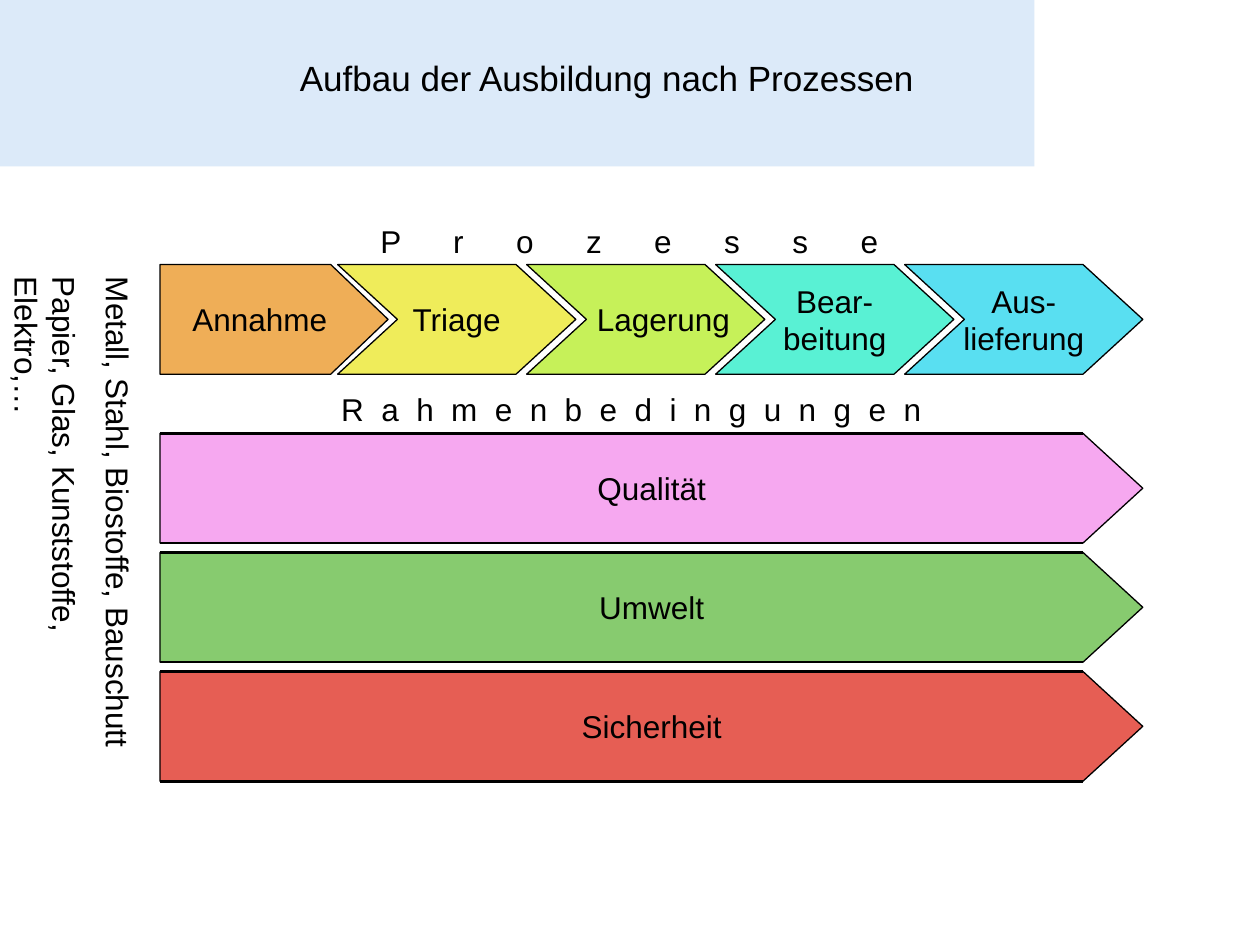
from dataclasses import dataclass

from pptx import Presentation
from pptx.dml.color import RGBColor
from pptx.enum.shapes import MSO_CONNECTOR, MSO_SHAPE
from pptx.enum.text import MSO_ANCHOR, PP_ALIGN
from pptx.oxml.ns import qn
from pptx.util import Inches, Pt


@dataclass(frozen=True)
class Theme:
    font: str = "Arial"
    title_size: int = 20
    body_size: int = 18
    ink: str = "000000"
    band: str = "DCEAF9"
    steps: tuple = ("EFAE57", "EFEC5A", "C6F159", "59F1D4", "59DFF1")
    bars: tuple = ("F6A8F0", "87CB6F", "E65E54")


THEME = Theme()


def write_text(shape, text, size=THEME.body_size, align=PP_ALIGN.CENTER,
               anchor=MSO_ANCHOR.MIDDLE, wrap=False, left_margin=0.1,
               space_before=0, tracking=0):
    """Fill a shape with one paragraph per line; tracking is in points."""
    frame = shape.text_frame
    frame.text = text
    frame.word_wrap = wrap
    frame.vertical_anchor = anchor
    frame.margin_left = Inches(left_margin)
    for index, paragraph in enumerate(frame.paragraphs):
        paragraph.alignment = align
        paragraph.space_before = Pt(space_before if index else 0)
        for run in paragraph.runs:
            run.font.name = THEME.font
            run.font.size = Pt(size)
            run.font.color.rgb = RGBColor.from_string(THEME.ink)
            if tracking:
                run.font._element.set("spc", str(int(tracking * 100)))


def add_filled(kind, left, top, width, height, fill, outlined=True):
    shape = slide.shapes.add_shape(
        kind, Inches(left), Inches(top), Inches(width), Inches(height))
    shape.shadow.inherit = False
    shape.fill.solid()
    shape.fill.fore_color.rgb = RGBColor.from_string(fill)
    if outlined:
        shape.line.color.rgb = RGBColor.from_string(THEME.ink)
        shape.line.width = Pt(0.75)
    else:
        shape.line.fill.background()
    return shape


presentation = Presentation()
presentation.slide_width = Inches(10)
presentation.slide_height = Inches(7.5)
slide = presentation.slides.add_slide(presentation.slide_layouts[5])

# Header band, placed behind the title
band = add_filled(MSO_SHAPE.RECTANGLE, 0, 0, 8.21, 1.32, THEME.band, outlined=False)
slide.shapes._spTree.insert(2, band._element)

title = slide.shapes.title
title.left, title.top = Inches(2.28), Inches(0.4)
title.width, title.height = Inches(5.93), Inches(0.63)
write_text(title, "Aufbau der Ausbildung nach Prozessen", size=THEME.title_size,
           align=PP_ALIGN.LEFT, anchor=MSO_ANCHOR.TOP, wrap=True)

# Process chain
LEFT, RIGHT, HEIGHT = 1.27, 9.07, 0.87
STEP_TOP, STEP_PITCH = 2.1, 1.5
CHEVRON_WIDTH, CHEVRON_POINT = 1.89, 0.545
steps = ["Annahme", "Triage", "Lagerung", "Bear-\nbeitung", "Aus-\nlieferung"]
for index, (label, color) in enumerate(zip(steps, THEME.steps)):
    if index == 0:
        step = add_filled(MSO_SHAPE.PENTAGON, LEFT, STEP_TOP, 1.81, HEIGHT, color)
        step.adjustments[0] = 0.523
    else:
        left = RIGHT - CHEVRON_WIDTH - (len(steps) - 1 - index) * STEP_PITCH
        step = add_filled(MSO_SHAPE.CHEVRON, left, STEP_TOP, CHEVRON_WIDTH, HEIGHT, color)
        step.adjustments[0] = CHEVRON_POINT
    write_text(step, label, left_margin=0.38 if label == "Lagerung" else 0.1)

# Framework bars with heavier long edges
BAR_TOP, BAR_PITCH = 3.44, 0.945
edge_right = RIGHT - CHEVRON_POINT * HEIGHT
for index, (label, color) in enumerate(
        zip(["Qualität", "Umwelt", "Sicherheit"], THEME.bars)):
    top = BAR_TOP + index * BAR_PITCH
    bar = add_filled(MSO_SHAPE.PENTAGON, LEFT, top, RIGHT - LEFT, HEIGHT, color)
    bar.adjustments[0] = CHEVRON_POINT
    write_text(bar, label, left_margin=0.34)
    for y in (top, top + HEIGHT):
        edge = slide.shapes.add_connector(
            MSO_CONNECTOR.STRAIGHT, Inches(LEFT), Inches(y), Inches(edge_right), Inches(y))
        edge.line.color.rgb = RGBColor.from_string(THEME.ink)
        edge.line.width = Pt(1.5)
        edge._element.spPr.get_or_add_ln().addnext(
            edge._element.makeelement(qn("a:effectLst"), {}))

# Materials, written downwards
materials = slide.shapes.add_textbox(Inches(0.19), Inches(2.1), Inches(0.95), Inches(4.17))
write_text(materials,
           "Metall, Stahl, Biostoffe, Bauschutt\nPapier, Glas, Kunststoffe, Elektro,…",
           align=PP_ALIGN.LEFT, anchor=MSO_ANCHOR.TOP, wrap=True, space_before=9)
materials.text_frame._txBody.bodyPr.set("vert", "eaVert")

# Letter-spaced headings
headings = [
    ("P r o z e s s e", 2.92, 1.71, 4.16, 12.5),
    ("R a h m e n b e d i n g u n g e n", 2.61, 3.05, 4.81, 2.5),
]
for text, left, top, width, tracking in headings:
    heading = slide.shapes.add_textbox(
        Inches(left), Inches(top), Inches(width), Inches(0.4))
    write_text(heading, text, align=PP_ALIGN.LEFT, anchor=MSO_ANCHOR.TOP,
               wrap=True, tracking=tracking)

presentation.save("out.pptx")
